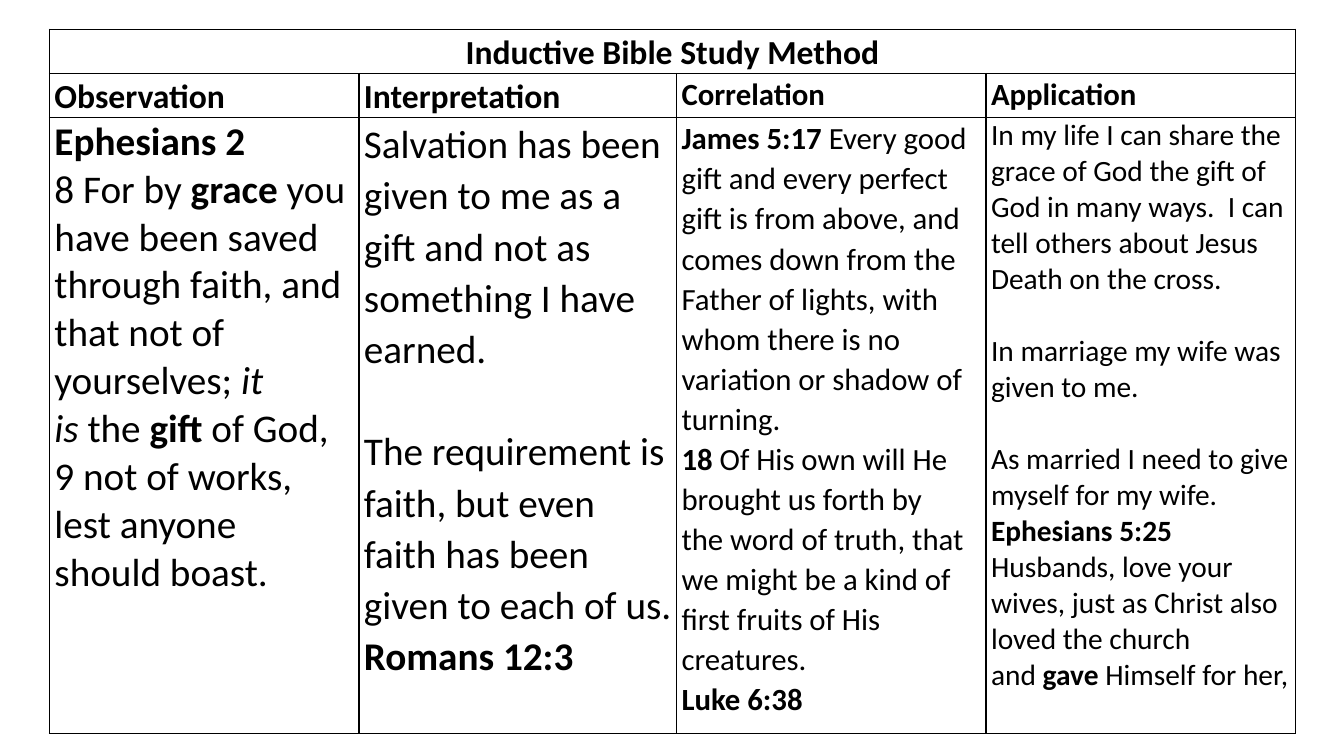
from lxml import etree
from pptx import Presentation
from pptx import util as u
from pptx.dml.color import RGBColor
from pptx.enum import text
from pptx.oxml import ns

BLACK = RGBColor(0, 0, 0)
WHITE = RGBColor(255, 255, 255)
LOOSE = 1.07
COLS = [307, 315, 307, 307]
ROWS = [44, 44, 611]

TITLE = "Inductive Bible Study Method"
HEADS = [("Observation", 24), ("Interpretation", 24),
         ("Correlation", 22), ("Application", 22)]

# A paragraph is a list of (words, style) runs, with "b" for bold and "i" for
# italic; "~" is a no-break space.
VERSES = [
    [("Ephesians 2", "b")],
    [("8~For by ", ""), ("grace", "b"),
     (" you have been saved through faith, and that not of yourselves;~", ""),
     ("it is", "i"), ("~the ", ""), ("gift", "b"), (" of God,~", "")],
    [("9 not of~works, lest anyone should~boast.", "")],
]
MEANING = [
    [("Salvation has been given to me as a gift and not as something "
      "I have earned.", "")],
    [("The requirement is faith, but even faith has been given to each "
      "of us. ", ""), ("Romans 12:3", "b")],
]
LINKS = [
    [("James 5:17~", "b"),
     ("Every good gift and every perfect gift is from above, and comes down "
      "from the Father of lights,~with whom there is no variation or shadow "
      "of turning.~", "")],
    [("18~", "b"),
     ("Of His own will He brought us forth by the~word of truth,~that we "
      "might be a kind of first fruits of His creatures.", "")],
    [("Luke 6:38", "b")],
]
LIFE = [
    [("In my life I can share the grace of God the gift of God in many ways.  "
      "I can tell others about Jesus Death on the cross.", "")],
    [("In marriage my wife was given to me.", "")],
    [("As married I need to give myself for my wife.", "")],
    [("Ephesians 5:25", "b")],
    [("Husbands, love your wives, just as Christ also loved the church and",
      ""), ("~gave ", "b"), ("Himself for her,", "")],
]
# Paragraphs, size, line spacing, indexes of those set off by one empty line
BODY = [(VERSES, 28, 1.0, ()), (MEANING, 28, LOOSE, (1,)),
        (LINKS, 22, LOOSE, ()), (LIFE, 21, 1.0, (1, 2))]


def px(n):
    return u.Emu(n * 9144)


def put(obj, **values):
    for name, value in values.items():
        setattr(obj, name, value)


class Deck:
    font = "Calibri"
    lead = 1.22  # line height of the font per point of size

    def __init__(self):
        self.prs = Presentation()
        put(self.prs, slide_width=u.Inches(13.33), slide_height=u.Inches(7.5))
        self.slide = self.prs.slides.add_slide(self.prs.slide_layouts[6])

    def grid(self, left, top, cols, rows):
        frame = self.slide.shapes.add_table(
            len(rows), len(cols), px(left), px(top),
            px(sum(cols)), px(sum(rows)))
        table = frame.table
        put(table, first_row=False, horz_banding=False)
        for col, width in zip(table.columns, cols):
            col.width = px(width)
        for row, height in zip(table.rows, rows):
            row.height = px(height)
        for cell in table.iter_cells():
            self.frame(cell)
        return table

    def frame(self, cell):
        """Give a cell its margins, black borders and white fill."""
        put(cell, margin_left=px(5), margin_right=px(5),
            margin_top=0, margin_bottom=0)
        props = cell._tc.get_or_add_tcPr()
        for side in ("lnL", "lnR", "lnT", "lnB"):
            line = etree.SubElement(props, ns.qn("a:" + side),
                                    w=str(u.Pt(1)))
            fill = etree.SubElement(line, ns.qn("a:solidFill"))
            etree.SubElement(fill, ns.qn("a:srgbClr"), val=str(BLACK))
        cell.fill.solid()
        cell.fill.fore_color.rgb = WHITE

    def label(self, cell, paras, size, space, gaps=(),
              align=text.PP_ALIGN.LEFT):
        box = cell.text_frame
        for i, runs in enumerate(paras):
            para = box.add_paragraph() if i else box.paragraphs[0]
            put(para, alignment=align, line_spacing=space)
            if i in gaps:
                para.space_before = u.Pt(round(size * self.lead * space, 1))
            for words, style in runs:
                run = para.add_run()
                run.text = words.replace("~", chr(160))
                put(run.font, name=self.font, size=u.Pt(size),
                    bold="b" in style, italic="i" in style)
                run.font.color.rgb = BLACK


def main():
    deck = Deck()
    table = deck.grid(49, 29, COLS, ROWS)
    title = table.cell(0, 0)
    title.merge(table.cell(0, len(COLS) - 1))
    deck.label(title, [[(TITLE, "b")]], 24, LOOSE,
               align=text.PP_ALIGN.CENTER)
    for i, (head, size) in enumerate(HEADS):
        deck.label(table.cell(1, i), [[(head, "b")]], size, LOOSE)
    for i, column in enumerate(BODY):
        deck.label(table.cell(2, i), *column)
    deck.prs.save("out.pptx")


if __name__ == "__main__":
    main()
